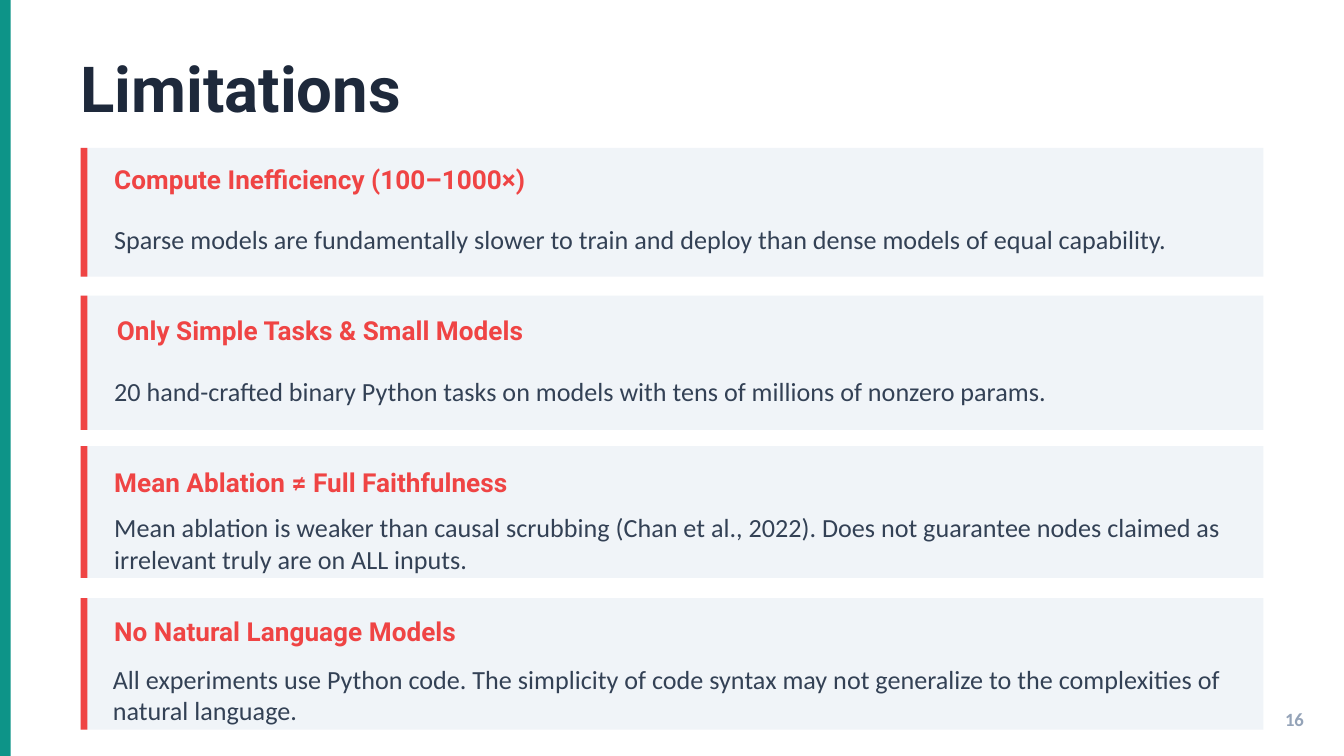
from pptx import Presentation
from pptx.dml.color import RGBColor
from pptx.enum.shapes import MSO_SHAPE
from pptx.enum.text import MSO_ANCHOR, MSO_AUTO_SIZE, PP_ALIGN
from pptx.util import Inches, Pt

COLORS = {
    "teal": "0D9488",
    "red": "EF4444",
    "card": "F0F4F8",
    "title": "1E293B",
    "body": "334155",
    "number": "94A3B8",
}
TITLE = "Limitations"
PAGE_NUMBER = "16"
LIMITATIONS = [
    {"top": 1.1, "height": 0.96, "heading_at": (0.85, 1.21), "body_at": (0.85, 1.63),
     "heading": "Compute Inefficiency (100–1000×)",
     "body": "Sparse models are fundamentally slower to train and deploy than dense models "
             "of equal capability."},
    {"top": 2.2, "height": 1, "heading_at": (0.87, 2.33), "body_at": (0.85, 2.76),
     "heading": "Only Simple Tasks & Small Models",
     "body": "20 hand-crafted binary Python tasks on models with tens of millions of "
             "nonzero params."},
    {"top": 3.32, "height": 0.98, "heading_at": (0.85, 3.46), "body_at": (0.85, 3.89),
     "heading": "Mean Ablation ≠ Full Faithfulness",
     "body": "Mean ablation is weaker than causal scrubbing (Chan et al., 2022). Does not "
             "guarantee nodes claimed as irrelevant truly are on ALL inputs."},
    {"top": 4.45, "height": 0.98, "heading_at": (0.85, 4.57), "body_at": (0.84, 5.02),
     "heading": "No Natural Language Models",
     "body": "All experiments use Python code. The simplicity of code syntax may not "
             "generalize to the complexities of natural language."},
]
SLIDE_WIDTH = Inches(10)
SLIDE_HEIGHT = SLIDE_WIDTH * 9 // 16
CARD_LEFT, CARD_WIDTH, ACCENT_WIDTH = 0.6, 8.8, 0.05
TEXT_WIDTH = 8.3


def add_bar(slide, left, top, width, height, color):
    shape = slide.shapes.add_shape(
        MSO_SHAPE.RECTANGLE, Inches(left), Inches(top), Inches(width), Inches(height))
    shape.shadow.inherit = False
    shape.fill.solid()
    shape.fill.fore_color.rgb = RGBColor.from_string(COLORS[color])
    shape.line.fill.background()


def write(shape, text, font_name, size, color, bold=True, align=PP_ALIGN.LEFT, inset=0):
    frame = shape.text_frame
    frame.text = text
    frame.word_wrap = True
    frame.auto_size = MSO_AUTO_SIZE.NONE
    frame.vertical_anchor = MSO_ANCHOR.MIDDLE
    frame.margin_left = frame.margin_right = Inches(inset)
    frame.margin_top = frame.margin_bottom = Inches(inset / 2)
    paragraph = frame.paragraphs[0]
    paragraph.alignment = align
    font = paragraph.runs[0].font
    font.name, font.size, font.bold = font_name, Pt(size), bold
    font.color.rgb = RGBColor.from_string(COLORS[color])


def add_text(slide, left, top, width, height, *style, **options):
    box = slide.shapes.add_textbox(Inches(left), Inches(top), Inches(width), Inches(height))
    write(box, *style, **options)


def main():
    """Build the limitations slide."""
    presentation = Presentation()
    presentation.slide_width, presentation.slide_height = SLIDE_WIDTH, SLIDE_HEIGHT
    slide = presentation.slides.add_slide(presentation.slide_layouts[5])

    title = slide.shapes.title
    title.left, title.top = Inches(0.6), Inches(0.3)
    title.width, title.height = Inches(8.5), Inches(0.7)
    write(title, TITLE, "Roboto", 34, "title")

    add_bar(slide, 0, 0, 0.08, SLIDE_HEIGHT.inches if hasattr(SLIDE_HEIGHT, "inches")
            else SLIDE_HEIGHT / Inches(1), "teal")
    add_text(slide, 9.2, 5.2, 0.6, 0.3, PAGE_NUMBER, "Calibri", 10, "number",
             align=PP_ALIGN.RIGHT, inset=0.1)

    for item in LIMITATIONS:
        top, height = item["top"], item["height"]
        add_bar(slide, CARD_LEFT, top, CARD_WIDTH, height, "card")
        add_bar(slide, CARD_LEFT, top, ACCENT_WIDTH, height, "red")
        add_text(slide, *item["heading_at"], TEXT_WIDTH, 0.25,
                 item["heading"], "Roboto", 14, "red")
        add_text(slide, *item["body_at"], TEXT_WIDTH, 0.3,
                 item["body"], "Calibri", 14, "body", bold=False)

    presentation.save("out.pptx")


if __name__ == "__main__":
    main()
